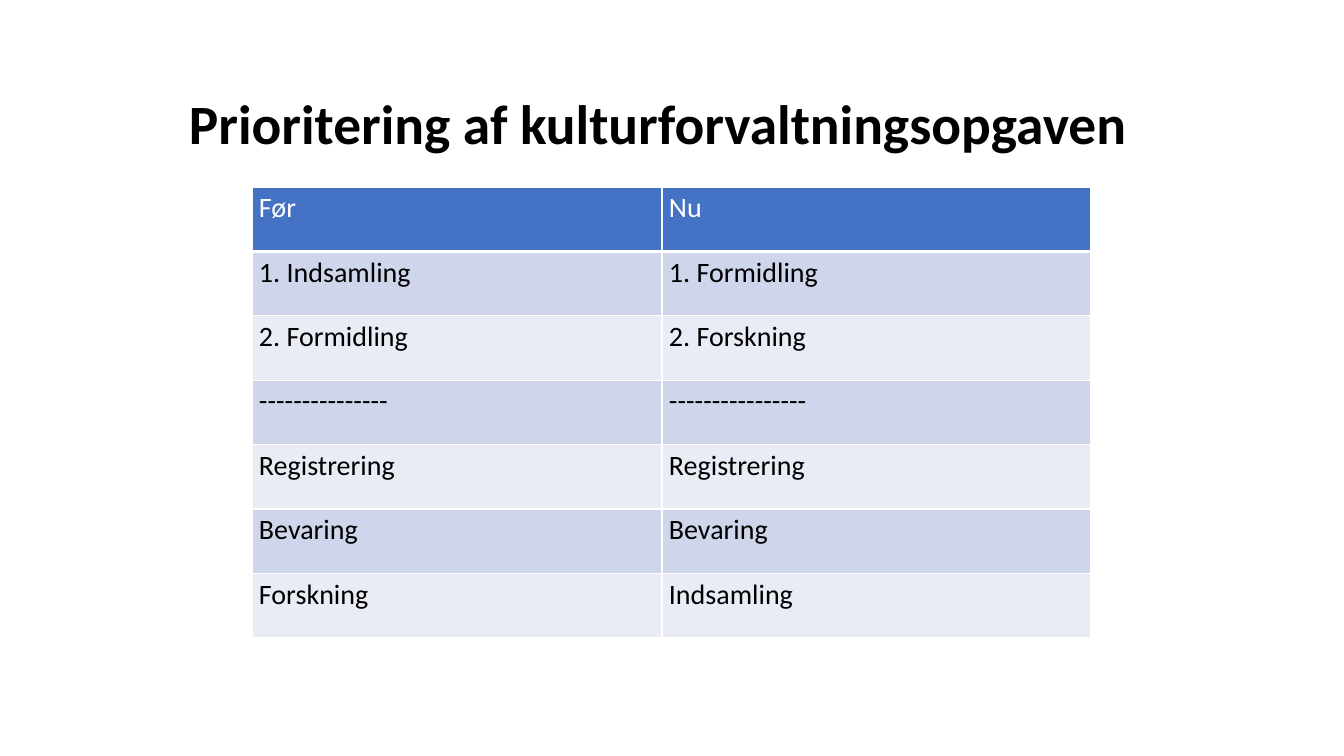
from lxml.etree import SubElement
from pptx import Presentation
from pptx.dml.color import RGBColor
from pptx.enum.text import MSO_ANCHOR, MSO_AUTO_SIZE, PP_ALIGN
from pptx.oxml.ns import qn
from pptx.util import Pt

PX = 914400 / 100.8
COLORS = {
    "text": "000000",
    "header": "4472C4",
    "header_text": "FFFFFF",
    "odd_row": "CFD5EA",
    "even_row": "E9EBF5",
    "border": "FFFFFF",
}
PRIORITIES = [
    ("Før", "Nu"),
    ("1. Indsamling", "1. Formidling"),
    ("2. Formidling", "2. Forskning"),
    ("---------------", "----------------"),
    ("Registrering", "Registrering"),
    ("Bevaring", "Bevaring"),
    ("Forskning", "Indsamling"),
]


def px(length):
    return round(length * PX)


def format_font(font, size, color, bold):
    values = {"name": "Calibri", "size": Pt(size), "bold": bold}
    for attribute, value in values.items():
        setattr(font, attribute, value)
    font.color.rgb = RGBColor.from_string(COLORS[color])


prs = Presentation()
prs.slide_width, prs.slide_height = px(1344), px(756)
slide = prs.slides.add_slide(prs.slide_layouts[5])

# Heading
heading = slide.shapes.title
heading_place = {"left": 107, "top": 93, "width": 1102, "height": 67}
for attribute, value in heading_place.items():
    setattr(heading, attribute, px(value))
heading_frame = heading.text_frame
heading_format = {
    "text": "Prioritering af kulturforvaltningsopgaven",
    "auto_size": MSO_AUTO_SIZE.NONE,
    "vertical_anchor": MSO_ANCHOR.MIDDLE,
    "word_wrap": True,
}
for attribute, value in heading_format.items():
    setattr(heading_frame, attribute, value)
heading_line = heading_frame.paragraphs[0]
heading_line.alignment = PP_ALIGN.CENTER
heading_line.line_spacing = 0.9
format_font(heading_line.runs[0].font, 39.6, "text", True)

# Priorities before and now
priorities = slide.shapes.add_table(
    len(PRIORITIES), 2, px(252), px(187), px(839), px(451)
).table
for column, width in zip(priorities.columns, (410, 429)):
    column.width = px(width)

cell_margins = {"margin_left": 7, "margin_right": 7, "margin_top": 4, "margin_bottom": 4}
for row, tasks in enumerate(PRIORITIES):
    is_header = row == 0
    row_fill = "header" if is_header else "odd_row" if row % 2 else "even_row"
    for col, task in enumerate(tasks):
        cell = priorities.cell(row, col)
        cell.text = task
        for attribute, value in cell_margins.items():
            setattr(cell, attribute, px(value))
        format_font(
            cell.text_frame.paragraphs[0].runs[0].font,
            20, "header_text" if is_header else "text", False,
        )
        properties = cell._tc.get_or_add_tcPr()
        for side in "LRTB":
            weight = 3 if is_header and side == "B" else 1
            border = SubElement(properties, qn(f"a:ln{side}"), w=str(Pt(weight)))
            border_fill = SubElement(border, qn("a:solidFill"))
            SubElement(border_fill, qn("a:srgbClr"), val=COLORS["border"])
        cell.fill.solid()
        cell.fill.fore_color.rgb = RGBColor.from_string(COLORS[row_fill])

prs.save("out.pptx")
